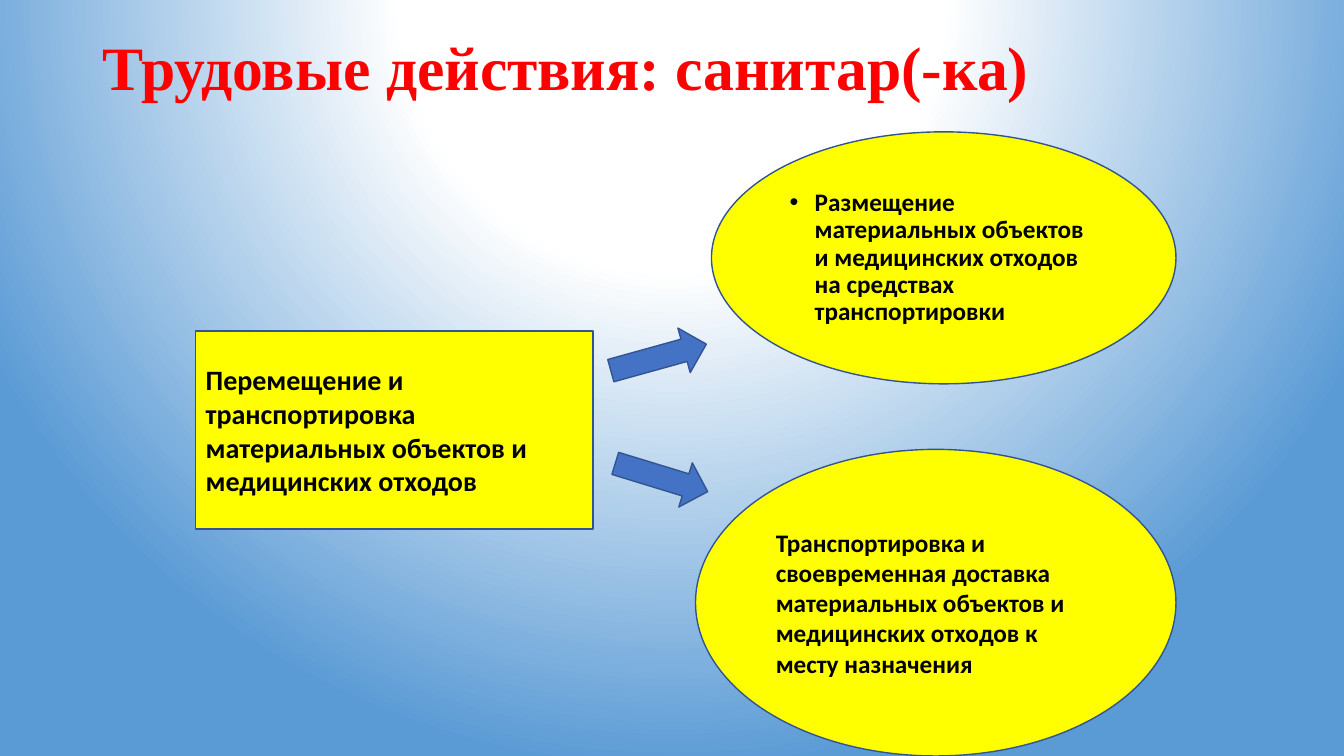
from pptx import Presentation
from pptx.dml.color import RGBColor
from pptx.enum.shapes import MSO_SHAPE
from pptx.enum.text import MSO_ANCHOR, MSO_AUTO_SIZE, PP_ALIGN
from pptx.oxml import parse_xml
from pptx.oxml.ns import nsdecls
from pptx.util import Inches, Pt

HUES = {"white": "FFFFFF", "sky": "5B9BD5", "red": "FF0000", "black": "000000",
        "yellow": "FFFF00", "blue": "4472C4", "edge": "325491"}
COLS, ROWS = 16, 9


class Board:
    """Style and current slide; boxes are (column, row, columns, rows)."""

    def __init__(self, deck):
        self.slide = deck.slides.add_slide(deck.slide_layouts[1])
        self.col = deck.slide_width / COLS
        self.row = deck.slide_height / ROWS

    def hue(self, name):
        return RGBColor.from_string(HUES[name])

    def place(self, box):
        x, y, w, h = box
        return [round(n) for n in (x * self.col, y * self.row, w * self.col, h * self.row)]

    def move(self, shape, box):
        shape.left, shape.top, shape.width, shape.height = self.place(box)

    def glow(self, stops):
        marks = "".join(f'<a:gs pos="{pos * 1000}"><a:srgbClr val="{HUES[name]}"/></a:gs>'
                        for pos, name in stops)
        self.slide.element.cSld.insert(0, parse_xml(
            f'<p:bg {nsdecls("p", "a")}><p:bgPr><a:gradFill rotWithShape="1">'
            f'<a:gsLst>{marks}</a:gsLst><a:path path="circle">'
            '<a:fillToRect l="50000" t="-80000" r="50000" b="180000"/></a:path>'
            '</a:gradFill><a:effectLst/></p:bgPr></p:bg>'))

    def paint(self, shape, fill):
        shape.fill.solid()
        shape.fill.fore_color.rgb = self.hue(fill)
        shape.line.color.rgb = self.hue("edge")
        shape.line.width = Pt(1)

    def label(self, shape, text, size, font="Calibri", hue="black", space=1.0):
        frame = shape.text_frame
        frame.text = text
        frame.word_wrap = True
        frame.auto_size = MSO_AUTO_SIZE.NONE
        frame.vertical_anchor = MSO_ANCHOR.MIDDLE
        para = frame.paragraphs[0]
        para.alignment = PP_ALIGN.LEFT
        para.line_spacing = space
        style = para.runs[0].font
        style.name, style.size, style.bold = font, Pt(size), True
        style.color.rgb = self.hue(hue)
        return para

    def title(self, box, text):
        head = self.slide.shapes.title
        self.move(head, box)
        self.label(head, text, 44, "Times New Roman", "red", 0.9)

    def bullet(self, box, text):
        body = self.slide.placeholders[1]
        self.move(body, box)
        body.element.spPr.append(parse_xml(
            f'<a:prstGeom {nsdecls("a")} prst="ellipse"><a:avLst/></a:prstGeom>'))
        self.paint(body, "yellow")
        para = self.label(body, text, 18, space=0.9)
        para.space_before = Pt(10)
        props = para._p.get_or_add_pPr()
        props.set("marL", str(Inches(0.25)))
        props.set("indent", str(Inches(-0.25)))
        for tag in ("buFont {} typeface='Arial'", "buChar {} char='•'"):
            props.append(parse_xml(f"<a:{tag.format(nsdecls('a'))}/>"))

    def shape(self, kind, box, fill):
        item = self.slide.shapes.add_shape(kind, *self.place(box))
        item.shadow.inherit = False
        self.paint(item, fill)
        return item

    def card(self, kind, box, text, size):
        self.label(self.shape(kind, box, "yellow"), text, size)

    def arrow(self, box, turn):
        self.shape(MSO_SHAPE.RIGHT_ARROW, box, "blue").rotation = turn


def main():
    deck = Presentation()
    deck.slide_width, deck.slide_height = Inches(13.33), Inches(7.5)
    board = Board(deck)

    # Backdrop and heading
    board.glow([(0, "white"), (35, "white"), (100, "sky")])
    board.title((1.1, 0, 13.8, 1.68), "Трудовые действия: санитар(-ка)")

    # Task and the two actions it splits into
    board.bullet((8.47, 1.57, 5.53, 3),
                 "Размещение материальных объектов и медицинских отходов "
                 "на средствах транспортировки")
    board.card(MSO_SHAPE.RECTANGLE, (2.33, 3.94, 4.73, 2.36),
               "Перемещение и транспортировка материальных объектов "
               "и медицинских отходов", 20)
    board.card(MSO_SHAPE.OVAL, (8.28, 5.35, 5.72, 3.65),
               "Транспортировка и своевременная доставка материальных объектов "
               "и медицинских отходов к месту назначения", 18)

    # Arrows from task to actions
    board.arrow((7.25, 3.98, 1.18, 0.55), 344.5)
    board.arrow((7.3, 5.41, 1.15, 0.55), 17)

    deck.save("out.pptx")


if __name__ == "__main__":
    main()
